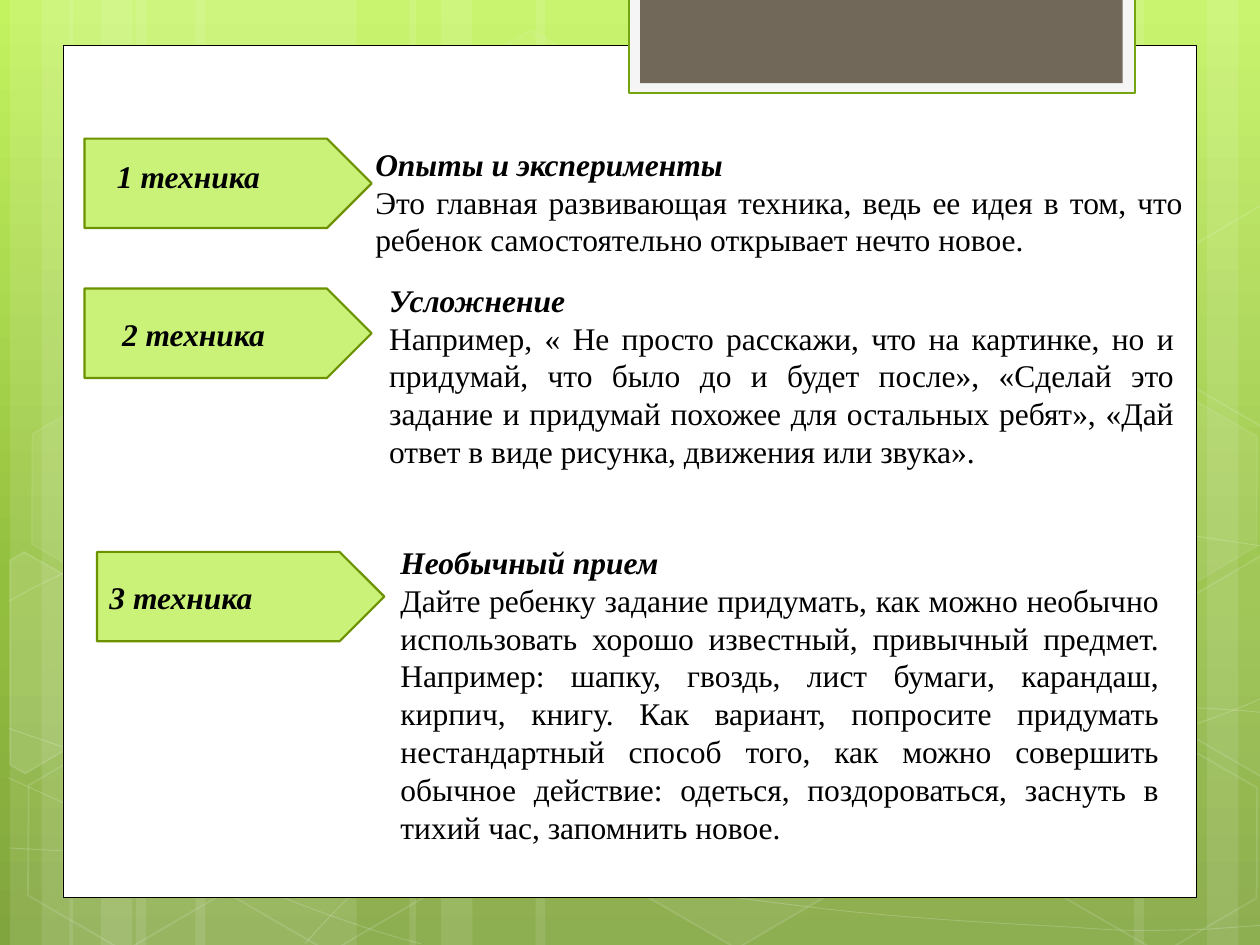
from copy import deepcopy
from lxml import etree
from pptx import Presentation
from pptx.dml.color import RGBColor
from pptx.enum.shapes import MSO_SHAPE
from pptx.enum.text import MSO_ANCHOR, MSO_AUTO_SIZE, PP_ALIGN
from pptx.oxml.ns import qn
from pptx.util import Cm, Pt

RECT, HEXAGON, ARROW = MSO_SHAPE.RECTANGLE, MSO_SHAPE.HEXAGON, MSO_SHAPE.PENTAGON
MIDDLE, TOP = MSO_ANCHOR.MIDDLE, MSO_ANCHOR.TOP
LEFT, JUSTIFY = PP_ALIGN.LEFT, PP_ALIGN.JUSTIFY
FIXED = MSO_AUTO_SIZE.NONE
WIDTH, HEIGHT = 10, 7.5
WHITE, BLACK = "FFFFFF", "000000"

# Left edge and width of each full-height stripe
STRIPES = [(1.08, 1.75), (0.08, 0.5), (0.33, 0.83), (1.55, 1.75), (0.55, 0.5),
           (0.8, 0.83), (7.33, 1.75), (9.58, 0.5), (9, 0.83), (4.25, 3.08),
           (3.25, 0.5), (3.5, 0.83)]

# Start point, then two control points and an end point for each bend
CURVES = [
    [(0.07, 6.73), (0.61, 6.76), (1.15, 6.79), (1.9, 6.78), (2.65, 6.77), (3.58, 6.75),
     (4.58, 6.65), (5.58, 6.55), (7, 6.36), (7.92, 6.17), (8.83, 5.98), (9.77, 5.68),
     (10.07, 5.51)],
    [(0.07, 4.77), (0.36, 4.61), (0.65, 4.46), (1.21, 4.31), (1.78, 4.16), (2.59, 3.94),
     (3.47, 3.87), (4.36, 3.8), (5.44, 3.79), (6.54, 3.87), (7.64, 3.95), (9.47, 4.26),
     (10.07, 4.34)],
    [(0.06, 6.17), (1.27, 6.72), (2.47, 7.27), (3.34, 7.49)],
    [(0.07, 5.78), (0.38, 5.89), (0.7, 6), (1.28, 6.16), (1.86, 6.31), (2.73, 6.56),
     (3.57, 6.73), (4.4, 6.9), (5.45, 7.08), (6.28, 7.18), (7.11, 7.29), (8, 7.33),
     (8.53, 7.36), (9.05, 7.4), (9.19, 7.38), (9.45, 7.38), (9.71, 7.37), (9.89, 7.35),
     (10.07, 7.34)],
    [(2.42, 7.49), (2.6, 7.29), (2.78, 7.09), (3.02, 6.91), (3.26, 6.73), (3.6, 6.53),
     (3.88, 6.39), (4.16, 6.25), (4.33, 6.19), (4.7, 6.09), (5.06, 5.99), (5.73, 5.85),
     (6.08, 5.78), (6.44, 5.71), (6.49, 5.71), (6.8, 5.69), (7.11, 5.66), (7.6, 5.63),
     (7.94, 5.62), (8.29, 5.61), (8.86, 5.62), (8.86, 5.62), (9.08, 5.62), (9.31, 5.62),
     (9.53, 5.62), (9.71, 5.63), (9.88, 5.64), (9.97, 5.65), (10.06, 5.66),
     (10.03, 5.65), (10.06, 5.66)],
]

# Left, top, fill opacity and line opacity in percent
HEXAGONS = [(3.34, 0.36, 4, 8), (4.97, 5.89, 6, 12), (0.11, 5.91, 0, 12),
            (0.14, 3.12, 7, 8), (1.74, 5.92, 0, 12), (8.34, 5.93, 0, 12),
            (8.34, 3.14, 7, 8)]

# Corners and fill opacity of the hexagons cut by the slide edge
CUTS = [
    ([(0.08, 4.45), (0.19, 4.38), (0.96, 4.82), (0.95, 5.7), (0.2, 6.14), (0.08, 6.07)], 10),
    ([(9.26, 4.85), (10.01, 4.41), (10.09, 4.46), (10.09, 6.13), (10.02, 6.17),
      (9.26, 5.73)], 4),
    ([(9.26, 2.07), (10.01, 1.63), (10.1, 1.68), (10.09, 3.35), (10.02, 3.39),
      (9.26, 2.95)], 0),
]

# Arrow corner, label, label box (None: inside the arrow), text box, heading, body
ITEMS = [
    ((0.67, 1.1), "1 техника", (0.83, 1.2, 1.73, 0.4), (2.88, 1.1, 6.61, 1.01),
     "Опыты и эксперименты",
     "Это главная развивающая техника, ведь ее идея в том, что ребенок "
     "самостоятельно открывает нечто новое."),
    ((0.67, 2.29), "2 техника", (0.87, 2.45, 1.65, 0.4), (2.99, 2.18, 6.43, 1.92),
     "Усложнение",
     "Например, « Не просто расскажи, что на картинке, но и придумай, что было до и "
     "будет после», «Сделай это задание и придумай похожее для остальных ребят», "
     "«Дай ответ в виде рисунка, движения или звука»."),
    ((0.77, 4.38), "3 техника", None, (3.08, 4.26, 6.22, 2.52),
     "Необычный прием",
     "Дайте ребенку задание придумать, как можно необычно использовать хорошо "
     "известный, привычный предмет. Например: шапку, гвоздь, лист бумаги, карандаш, "
     "кирпич, книгу. Как вариант, попросите придумать нестандартный способ того, как "
     "можно совершить обычное действие: одеться, поздороваться, заснуть в тихий час, "
     "запомнить новое."),
]


def size(*inches):
    return [Cm(2.54 * value) for value in inches]


def paint(fill, color, alpha):
    """Fill with a colour at the given opacity in percent; 0 means no fill."""
    if not alpha:
        fill.background()
        return
    fill.solid()
    fill.fore_color.rgb = RGBColor.from_string(color)
    if alpha < 100:
        tone = fill._xPr.find(qn("a:solidFill"))[0]
        etree.SubElement(tone, qn("a:alpha"), val=str(alpha * 1000))


def style(shape, color=WHITE, alpha=100, edge=WHITE, width=0, sheer=100):
    shape.shadow.inherit = False
    paint(shape.fill, color, alpha)
    paint(shape.line.fill, edge, sheer if width else 0)
    if width:
        shape.line.width = Pt(width)


def add_box(slide, kind, box, **look):
    shape = slide.shapes.add_shape(kind, *size(*box))
    style(shape, **look)
    return shape


def trace(slide, points, close, **look):
    """Draw an outline through points given in inches."""
    grid = [(x * 100, y * 100) for x, y in points]
    pen = slide.shapes.build_freeform(*grid[0], scale=Cm(0.0254))
    pen.add_line_segments(grid[1:], close=close)
    shape = pen.convert_to_shape()
    style(shape, **look)
    return shape


def bend(shape):
    """Turn each three line steps into one cubic curve."""
    steps = list(shape._element.iter(qn("a:lnTo")))
    for i in range(0, len(steps), 3):
        trio = steps[i:i + 3]
        curve = etree.Element(qn("a:cubicBezTo"))
        trio[0].addprevious(curve)
        for step in trio:
            curve.append(step[0])
            step.getparent().remove(step)


def add_backdrop(slide):
    fill = slide.background.fill
    fill.gradient()
    fill.gradient_angle = 270
    stops = next(slide._element.iter(qn("a:gsLst")))
    while len(stops) < 3:
        stops.append(deepcopy(stops[-1]))
    tones = [(0, "C3F35F"), (0.62, "93BF3F"), (1, "81A53E")]
    for stop, (place, color) in zip(fill.gradient_stops, tones):
        stop.position = place
        stop.color.rgb = RGBColor.from_string(color)
    for left, width in STRIPES:
        add_box(slide, RECT, (left, 0, width, HEIGHT), alpha=10)
    for curve in CURVES:
        bend(trace(slide, curve, False, alpha=0, width=0.5, sheer=20))
    for left, top, alpha, sheer in HEXAGONS:
        cell = add_box(slide, HEXAGON, (left, top, 1.75, 1.52),
                       alpha=alpha, width=1, sheer=sheer)
        cell.adjustments[0], cell.adjustments[1] = 0.285, 1.155
        cell.rotation = 30
    for points, alpha in CUTS:
        trace(slide, points, True, alpha=alpha, width=1, sheer=12)


def add_panel(slide):
    add_box(slide, RECT, (0.5, 0.36, 9, 6.76), edge=BLACK, width=0.5)
    add_box(slide, RECT, (4.99, -0.02, 4.02, 0.76),
            color="F5F5F5", edge="74A510", width=1.25)
    add_box(slide, RECT, (5.08, -0.02, 3.83, 0.68), color="71685A")


def write(shape, lines, align, anchor=TOP):
    """Set lines of (text, strong) as paragraphs."""
    frame = shape.text_frame
    frame.word_wrap = True
    frame.auto_size = FIXED
    frame.vertical_anchor = anchor
    for i, (text, strong) in enumerate(lines):
        para = frame.add_paragraph() if i else frame.paragraphs[0]
        para.alignment = align
        run = para.add_run()
        run.text = text
        font = run.font
        font.name, font.size = "Times New Roman", Pt(18)
        font.bold = font.italic = strong
        font.color.rgb = RGBColor.from_string(BLACK)


def add_item(slide, corner, label, spot, box, head, body):
    arrow = add_box(slide, ARROW, (*corner, 2.28, 0.71),
                    color="CAF278", edge="6D9200", width=1.25)
    if spot:
        write(slide.shapes.add_textbox(*size(*spot)), [(label, True)], LEFT)
    else:
        write(arrow, [(label, True)], LEFT, MIDDLE)
    write(slide.shapes.add_textbox(*size(*box)), [(head, True), (body, False)], JUSTIFY)


def main():
    deck = Presentation()
    deck.slide_width, deck.slide_height = size(WIDTH, HEIGHT)
    slide = deck.slides.add_slide(deck.slide_layouts[6])
    add_backdrop(slide)
    add_panel(slide)
    for item in ITEMS:
        add_item(slide, *item)
    deck.save("out.pptx")


if __name__ == "__main__":
    main()
